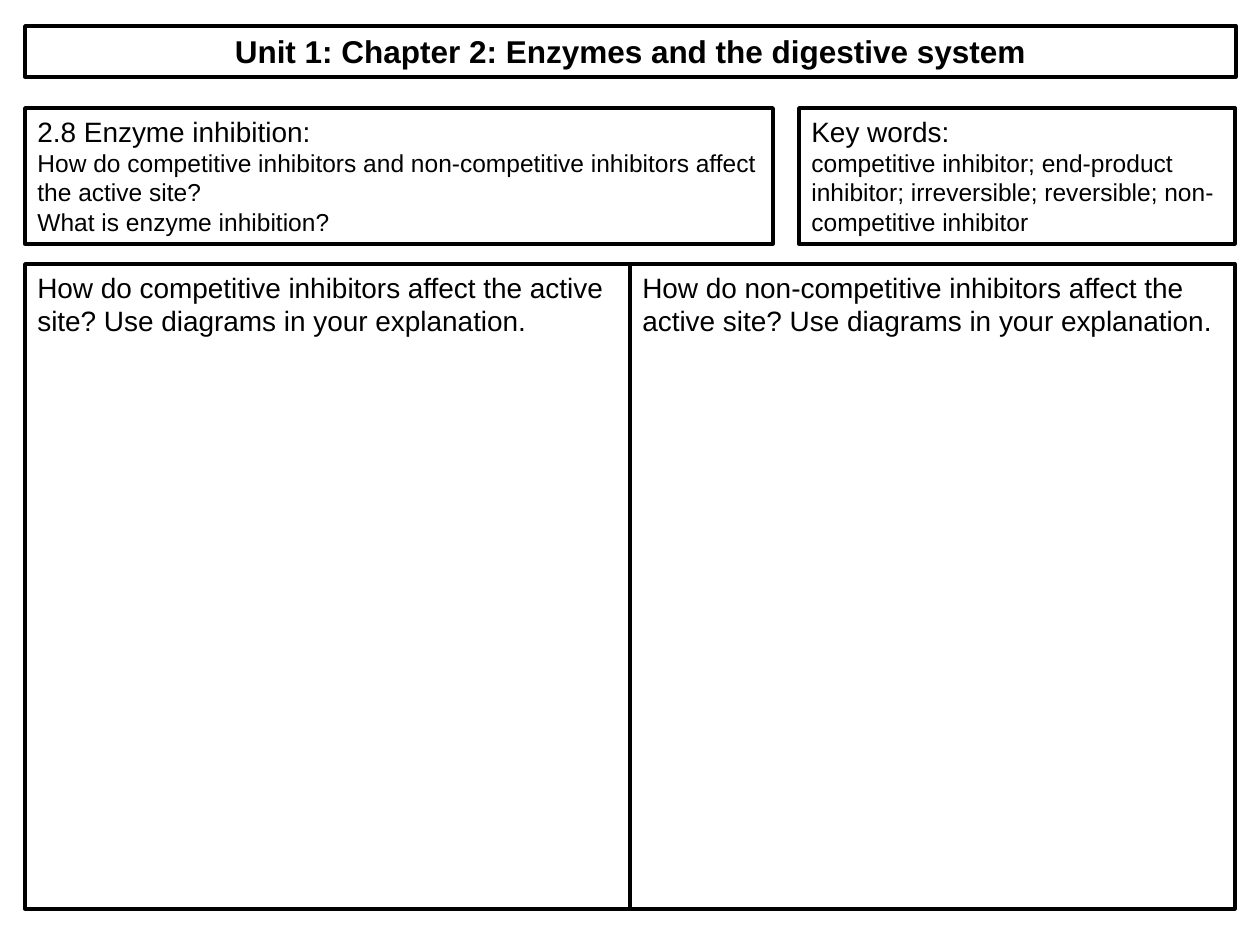
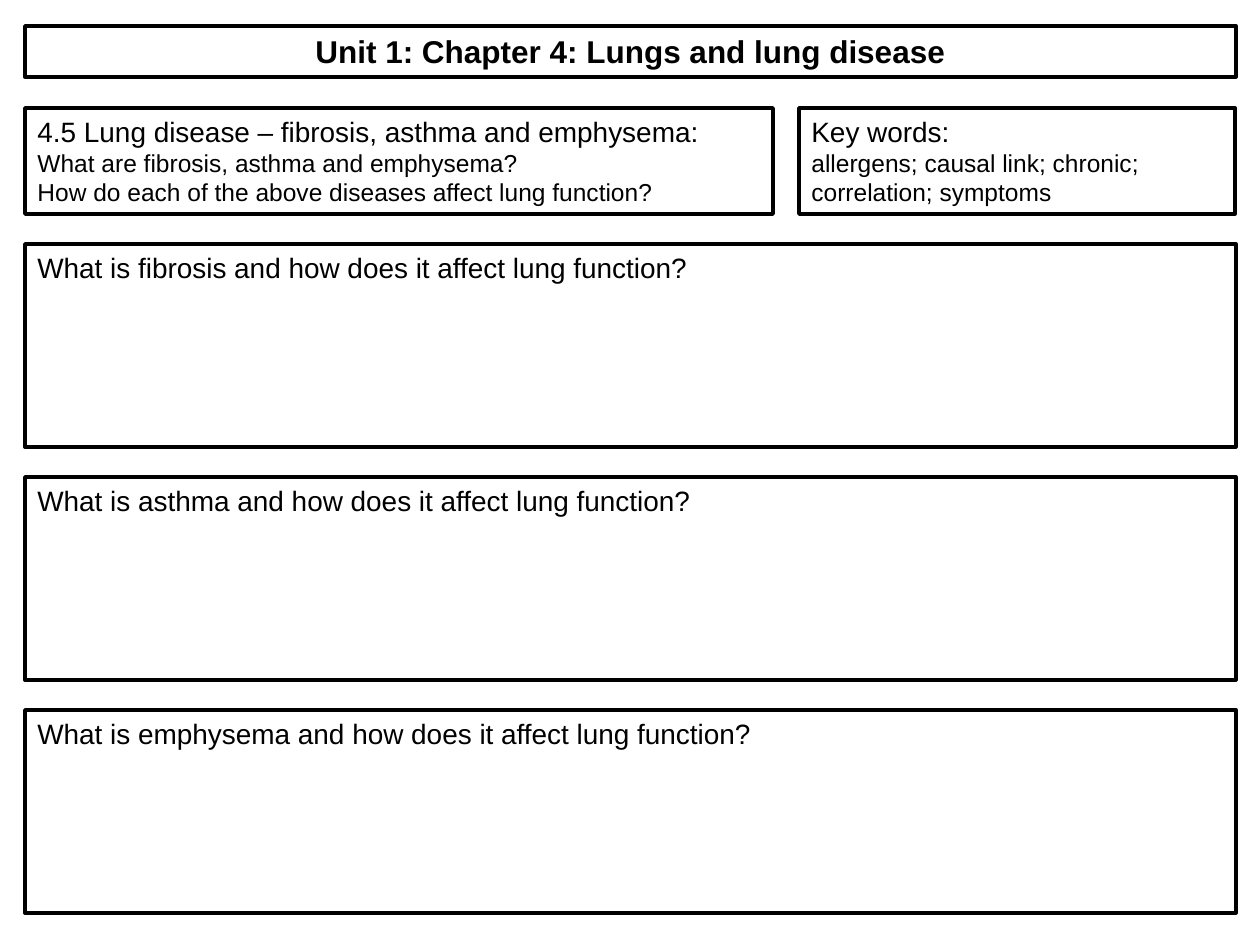
from dataclasses import dataclass
from typing import NamedTuple

from pptx import Presentation
from pptx.dml.color import RGBColor
from pptx.enum.shapes import MSO_SHAPE as Shape
from pptx.enum.text import MSO_ANCHOR as Anchor, MSO_AUTO_SIZE as AutoSize, PP_ALIGN as Align
from pptx.util import Emu, Pt

PX_PER_INCH = 126


def px(length):
    return Emu(round(length * 914400 / PX_PER_INCH))


@dataclass(frozen=True)
class Theme:
    ink: RGBColor = RGBColor(0, 0, 0)
    paper: RGBColor = RGBColor(255, 255, 255)
    font: str = "Arial"
    title: int = 18
    heading: int = 16
    body: int = 14
    border: int = 2


class Box(NamedTuple):
    left: int
    top: int
    width: int
    height: int


THEME = Theme()
SLIDE_SIZE = (1260, 945)
TITLE_BOX = Box(25, 26, 1211, 51)


def set_values(target, values):
    for name, value in values.items():
        setattr(target, name, value)


def add_panel(slide, box, lines, align=Align.LEFT, bold=False, grow=False):
    shape = slide.shapes.add_shape(Shape.RECTANGLE, *map(px, box))
    shape.shadow.inherit = False
    shape.fill.solid()
    shape.fill.fore_color.rgb = THEME.paper
    shape.line.color.rgb = THEME.ink
    shape.line.width = Pt(THEME.border)
    frame = shape.text_frame
    set_values(frame, {
        "word_wrap": True,
        "vertical_anchor": Anchor.TOP,
        "auto_size": AutoSize.SHAPE_TO_FIT_TEXT if grow else AutoSize.NONE,
    })
    for index, (text, size) in enumerate(lines):
        paragraph = frame.add_paragraph() if index else frame.paragraphs[0]
        paragraph.alignment = align
        run = paragraph.add_run()
        run.text = text
        set_values(run.font, {"name": THEME.font, "size": Pt(size), "bold": bold})
        run.font.color.rgb = THEME.ink


def add_title(slide, box, text):
    add_panel(slide, box, [(text, THEME.title)], align=Align.CENTER, bold=True, grow=True)


def add_header(slide, box, topic, questions, key_words):
    topic_width, key_width = 748, 436
    topic_box = box._replace(width=topic_width)
    key_box = box._replace(left=box.left + box.width - key_width, width=key_width)
    topic_lines = [(topic, THEME.heading)] + [(text, THEME.body) for text in questions]
    add_panel(slide, topic_box, topic_lines, grow=True)
    add_panel(slide, key_box, [("Key words:", THEME.heading), (key_words, THEME.body)])


def add_question_columns(slide, box, questions):
    width = box.width // len(questions)
    for index, question in enumerate(questions):
        column = box._replace(left=box.left + index * width, width=width)
        add_panel(slide, column, [(question, THEME.heading)])


def add_question_rows(slide, box, questions):
    gap = 30
    height = (box.height - gap * (len(questions) - 1)) // len(questions)
    for index, question in enumerate(questions):
        row = box._replace(top=box.top + index * (height + gap), height=height)
        add_panel(slide, row, [(question, THEME.heading)])


WORKSHEETS = [
    {
        "title": "Unit 1: Chapter 2: Enzymes and the digestive system",
        "header_box": Box(25, 108, 1210, 136),
        "topic": "2.8 Enzyme inhibition:",
        "aims": [
            "How do competitive inhibitors and non-competitive inhibitors affect the active site?",
            "What is enzyme inhibition?",
        ],
        "key_words": "competitive inhibitor; end-product inhibitor; irreversible; reversible; "
                     "non-competitive inhibitor",
        "layout": add_question_columns,
        "answer_box": Box(25, 264, 1210, 645),
        "questions": [
            f"How do {kind} inhibitors affect the active site? Use diagrams in your explanation."
            for kind in ("competitive", "non-competitive")
        ],
    },
    {
        "title": "Unit 1: Chapter 4: Lungs and lung disease",
        "header_box": Box(25, 108, 1210, 106),
        "topic": "4.5 Lung disease – fibrosis, asthma and emphysema:",
        "aims": [
            "What are fibrosis, asthma and emphysema?",
            "How do each of the above diseases affect lung function?",
        ],
        "key_words": "allergens; causal link; chronic; correlation; symptoms",
        "layout": add_question_rows,
        "answer_box": Box(25, 244, 1211, 669),
        "questions": [
            f"What is {disease} and how does it affect lung function?"
            for disease in ("fibrosis", "asthma", "emphysema")
        ],
    },
]


def add_worksheet(presentation, sheet):
    slide = presentation.slides.add_slide(presentation.slide_layouts[6])
    slide.background.fill.solid()
    slide.background.fill.fore_color.rgb = THEME.paper
    add_title(slide, TITLE_BOX, sheet["title"])
    add_header(slide, sheet["header_box"], sheet["topic"], sheet["aims"], sheet["key_words"])
    sheet["layout"](slide, sheet["answer_box"], sheet["questions"])


def main():
    presentation = Presentation()
    presentation.slide_width, presentation.slide_height = map(px, SLIDE_SIZE)
    for sheet in WORKSHEETS:
        add_worksheet(presentation, sheet)
    presentation.save("out.pptx")


if __name__ == "__main__":
    main()
